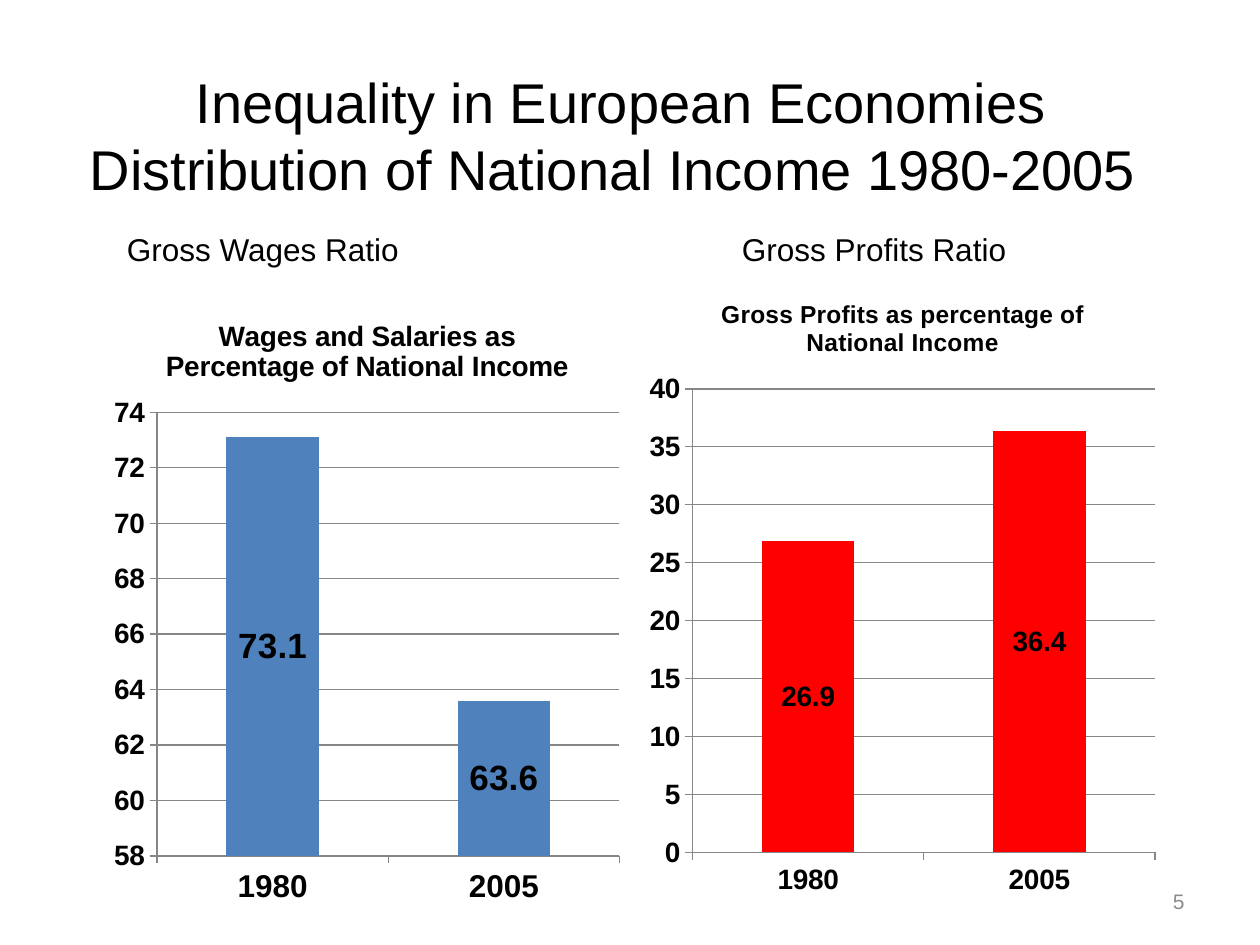
from pptx import Presentation
from pptx.chart.data import CategoryChartData
from pptx.dml.color import RGBColor
from pptx.enum import chart as ch, text as tx
from pptx.oxml import parse_xml
from pptx.oxml.ns import nsdecls
from pptx.util import Inches, Pt

BLACK = RGBColor(0x00, 0x00, 0x00)
GRAY = RGBColor(0x8C, 0x8C, 0x8C)
AXIS_GRAY = RGBColor(0x87, 0x87, 0x87)
BLUE = RGBColor(0x4F, 0x81, 0xBD)
RED = RGBColor(0xFF, 0x00, 0x00)

deck = Presentation()
deck.slide_width, deck.slide_height = Inches(10), Inches(7.5)
slide = deck.slides.add_slide(deck.slide_layouts[6])


def set_font(font, size, bold=False, color=BLACK):
    font.name = "Arial"
    font.size = Pt(size)
    font.bold = bold
    font.color.rgb = color


def add_text(content, *, at, size, color=BLACK, align=tx.PP_ALIGN.LEFT, anchor=tx.MSO_ANCHOR.TOP):
    frame = slide.shapes.add_textbox(*map(Inches, at)).text_frame
    frame.word_wrap = True
    frame.vertical_anchor = anchor
    line = frame.paragraphs[0]
    line.text = content
    line.alignment = align
    for run in line.runs:
        set_font(run.font, size, color=color)


add_text("Inequality in European Economies\vDistribution of National Income 1980-2005 ",
         at=(0.43, 0.29, 9, 1.56), size=32,
         align=tx.PP_ALIGN.CENTER, anchor=tx.MSO_ANCHOR.MIDDLE)

ratios = [
    dict(heading="Wages and Salaries as Percentage of National Income", heading_size=16,
         at=(0.83, 2.33, 4.17, 4.96), values=(73.1, 63.6), color=BLUE,
         scale=(58, 74, 2), year_size=18, label_size=20, plot=(0.1, 0.19, 0.88, 0.71)),
    dict(heading="Gross Profits as percentage of National Income", heading_size=14,
         at=(5.08, 2.18, 4.17, 5.04), values=(26.9, 36.4), color=RED,
         scale=(0, 40, 5), year_size=16, label_size=16, plot=(0.1, 0.18, 0.88, 0.73)),
]

for ratio in ratios:
    income = CategoryChartData()
    income.categories = ["1980", "2005"]
    income.add_series("Series 1", ratio["values"])
    chart = slide.shapes.add_chart(ch.XL_CHART_TYPE.COLUMN_CLUSTERED,
                                   *map(Inches, ratio["at"]), income).chart
    set_font(chart.font, 16)
    chart.has_legend = False
    chart.has_title = True
    heading = chart.chart_title.text_frame
    heading.text = ratio["heading"]
    set_font(heading.paragraphs[0].runs[0].font, ratio["heading_size"], bold=True)

    years, percent = chart.category_axis, chart.value_axis
    percent.minimum_scale, percent.maximum_scale, percent.major_unit = ratio["scale"]
    percent.has_major_gridlines = True
    for axis, size in ((years, ratio["year_size"]), (percent, 16)):
        set_font(axis.tick_labels.font, size, bold=True)
        axis.major_tick_mark = ch.XL_TICK_MARK.OUTSIDE
        axis.format.line.color.rgb = AXIS_GRAY
    percent.major_gridlines.format.line.color.rgb = AXIS_GRAY

    columns = chart.plots[0]
    columns.gap_width = 150
    columns.vary_by_categories = False
    series = columns.series[0]
    series.format.fill.solid()
    series.format.fill.fore_color.rgb = ratio["color"]
    labels = series.data_labels
    labels.show_value = True
    labels.position = ch.XL_LABEL_POSITION.CENTER
    set_font(labels.font, ratio["label_size"], bold=True)

    plot_area = chart.plots[0]._element.getparent()
    for old in plot_area.findall("{*}layout"):
        plot_area.remove(old)
    edges = "".join(f'<c:{side} val="{value}"/>' for side, value in zip("xywh", ratio["plot"]))
    plot_area.insert(0, parse_xml(
        f'<c:layout {nsdecls("c")}><c:manualLayout><c:layoutTarget val="inner"/>'
        f'<c:xMode val="edge"/><c:yMode val="edge"/>{edges}</c:manualLayout></c:layout>'))

add_text("5", at=(7.17, 6.95, 2.33, 0.4), size=12, color=GRAY,
         align=tx.PP_ALIGN.RIGHT, anchor=tx.MSO_ANCHOR.MIDDLE)
add_text("Gross Wages Ratio", at=(0.91, 1.78, 2.6, 0.4), size=18)
add_text("Gross Profits Ratio", at=(5.79, 1.78, 3.15, 0.4), size=18)

deck.save("out.pptx")
